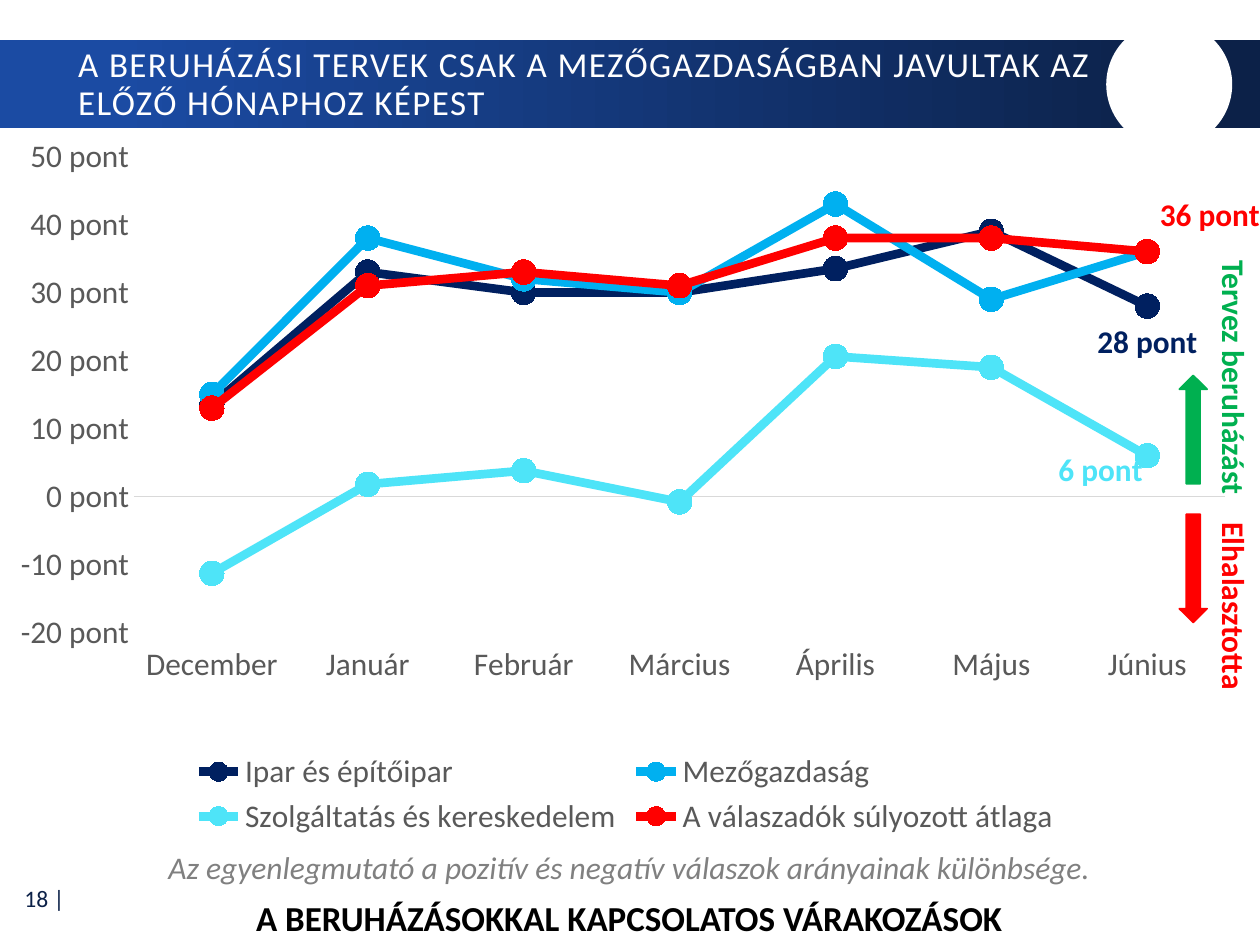
import pptx
import pptx.util
import pptx.chart.data
import pptx.oxml
from pptx.dml.color import RGBColor
from pptx.enum.chart import XL_CHART_TYPE, XL_LABEL_POSITION, XL_LEGEND_POSITION
from pptx.enum.chart import XL_MARKER_STYLE, XL_TICK_LABEL_POSITION, XL_TICK_MARK
from pptx.enum.shapes import MSO_SHAPE
from pptx.enum.text import MSO_ANCHOR, PP_ALIGN
from pptx.oxml.ns import qn

Inches, Pt = pptx.util.Inches, pptx.util.Pt

# Colours
WHITE = RGBColor(0xFF, 0xFF, 0xFF)
BLACK = RGBColor(0, 0, 0)
BLUE = RGBColor(0x1B, 0x4B, 0xA3)
DARK = RGBColor(0x0C, 0x21, 0x48)
NAVY = RGBColor(0x00, 0x20, 0x60)
SKY = RGBColor(0x00, 0xB0, 0xF0)
AQUA = RGBColor(0x4E, 0xE4, 0xF8)
RED = RGBColor(0xFF, 0, 0)
GREEN = RGBColor(0x00, 0xB0, 0x50)
GREY = RGBColor(0x80, 0x80, 0x80)
TEXT = RGBColor(0x59, 0x59, 0x59)
RULE = RGBColor(0xD9, 0xD9, 0xD9)

# Content
FONT = "Calibri"
TITLE = "A BERUHÁZÁSI TERVEK CSAK A MEZŐGAZDASÁGBAN JAVULTAK AZ ELŐZŐ HÓNAPHOZ KÉPEST"
PAGE = "18 |"
NOTE = "Az egyenlegmutató a pozitív és negatív válaszok arányainak különbsége."
TOPIC = "A BERUHÁZÁSOKKAL KAPCSOLATOS VÁRAKOZÁSOK"
SIDE = [("Tervez beruházást\t", GREEN), ("Elhalasztotta", RED)]
ARROWS = [(2.98, 0, GREEN), (4.08, 180, RED)]
UNIT = '0\\ "pont"'
MONTHS = ["December", "Január", "Február", "Március", "Április", "Május", "Június"]
BELOW, LEFT, ABOVE = (XL_LABEL_POSITION.BELOW, XL_LABEL_POSITION.LEFT,
                      XL_LABEL_POSITION.ABOVE)
# name, colour, values, last label: (side, shift x, shift y)
SERIES = [
    ("Ipar és építőipar", NAVY, [13.5, 33, 30, 30, 33.5, 39, 28], (BELOW, 0, 0)),
    ("Mezőgazdaság", SKY, [15, 38, 32, 30, 43, 29, 36], None),
    ("Szolgáltatás és kereskedelem", AQUA,
     [-11.3, 1.8, 3.8, -0.8, 20.6, 19, 6], (LEFT, 0.01, 0.02)),
    ("A válaszadók súlyozott átlaga", RED,
     [13, 31, 33, 31, 38, 38, 36], (ABOVE, 0.05, 0)),
]


def put(obj, **vals):
    for key, val in vals.items():
        setattr(obj, key, val)


def style(font, size, color, **vals):
    put(font, name=FONT, size=Pt(size), **vals)
    font.color.rgb = color


def write(para, text, size, color, **vals):
    run = para.add_run()
    run.text = text
    style(run.font, size, color, **vals)
    return run


def box(*at):
    frame = slide.shapes.add_textbox(*map(Inches, at)).text_frame
    frame.word_wrap = True
    return frame


def shape(kind, at, color, edge=False):
    item = slide.shapes.add_shape(kind, *map(Inches, at))
    item.shadow.inherit = False
    item.fill.solid()
    item.fill.fore_color.rgb = color
    if edge:
        item.line.color.rgb = color
        item.line.width = Pt(1)
    else:
        item.line.fill.background()
    return item


def layout(x, y, size=None):
    """Manual chart layout: an inner plot area, or a label shift."""
    tags = [("x", x), ("y", y)]
    if size:
        tags = ([("layoutTarget", "inner"), ("xMode", "edge"), ("yMode", "edge")]
                + tags + [("w", size[0]), ("h", size[1])])
    body = "".join(f'<c:{tag} val="{val}"/>' for tag, val in tags)
    return pptx.oxml.parse_xml(
        '<c:layout xmlns:c="http://schemas.openxmlformats.org/drawingml/2006/chart">'
        f"<c:manualLayout>{body}</c:manualLayout></c:layout>")


deck = pptx.Presentation()
put(deck, slide_width=Inches(10), slide_height=Inches(7.5))
slide = deck.slides.add_slide(deck.slide_layouts[5])

# Page number and header band
frame = box(0.01, 6.94, 0.6, 0.37)
frame.vertical_anchor = MSO_ANCHOR.MIDDLE
frame.paragraphs[0].alignment = PP_ALIGN.RIGHT
write(frame.paragraphs[0], PAGE, 13.5, DARK)

band = shape(MSO_SHAPE.RECTANGLE, (0, 0.32, 10, 0.7), BLUE)
band.fill.gradient()
band.fill.gradient_angle = 0
for stop, (pos, color) in zip(band.fill.gradient_stops, [(0.09, BLUE), (0.95, DARK)]):
    stop.position = pos
    stop.color.rgb = color
shape(MSO_SHAPE.OVAL, (8.78, 0.17, 1, 1), WHITE)

# Title, raised above the band
title = slide.shapes.title
put(title, left=Inches(0.52), top=Inches(0.34), width=Inches(8.32), height=Inches(0.67))
put(title.text_frame, word_wrap=True, vertical_anchor=MSO_ANCHOR.MIDDLE)
para = title.text_frame.paragraphs[0]
put(para, alignment=PP_ALIGN.LEFT, line_spacing=0.9)
run = write(para, TITLE, 20, WHITE)
run.font._element.set("spc", "80")
slide.shapes._spTree.append(title._element)

# Note and topic
frame = box(0.85, 6.68, 8.29, 0.82)
para = frame.paragraphs[0]
put(para, alignment=PP_ALIGN.CENTER, space_after=Pt(6))
write(para, NOTE, 18, GREY, italic=True)
para = frame.add_paragraph()
para.alignment = PP_ALIGN.CENTER
write(para, TOPIC, 20, BLACK, bold=True)

# Arrows and upright side text
for top, turn, color in ARROWS:
    arrow = shape(MSO_SHAPE.UP_ARROW, (9.36, top, 0.22, 0.86), color, True)
    arrow.rotation = turn

frame = box(9.5, 1.97, 0.5, 4.23)
frame._txBody.bodyPr.set("vert", "vert")
para = frame.paragraphs[0]
tabs = pptx.oxml.parse_xml(
    '<a:tabLst xmlns:a="http://schemas.openxmlformats.org/drawingml/2006/main">'
    f'<a:tab pos="{Inches(2.08)}" algn="l"/></a:tabLst>')
para._p.get_or_add_pPr().append(tabs)
for text, color in SIDE:
    write(para, text, 18, color, bold=True)

# Chart
data = pptx.chart.data.CategoryChartData(number_format=UNIT)
data.categories = MONTHS
for name, color, vals, label in SERIES:
    data.add_series(name, vals)
chart = slide.shapes.add_chart(XL_CHART_TYPE.LINE_MARKERS, Inches(0), Inches(0.98),
                               Inches(10), Inches(5.7), data).chart
put(chart, has_title=False, has_legend=True)
style(chart.font, 18, BLACK)
put(chart.legend, position=XL_LEGEND_POSITION.BOTTOM, include_in_layout=False)
style(chart.legend.font, 18, TEXT)

area = chart._chartSpace.chart.plotArea
for old in area.findall(qn("c:layout")):
    area.remove(old)
area.insert(0, layout(0.107, 0.046, (0.872, 0.663)))

# Axes
months, points = chart.category_axis, chart.value_axis
for axis in (months, points):
    put(axis, has_major_gridlines=False, major_tick_mark=XL_TICK_MARK.NONE,
        minor_tick_mark=XL_TICK_MARK.NONE)
    style(axis.tick_labels.font, 18, TEXT)
months.tick_label_position = XL_TICK_LABEL_POSITION.LOW
months.format.line.color.rgb = RULE
months.format.line.width = Pt(0.75)
put(points, minimum_scale=-20, maximum_scale=50, major_unit=10)
put(points.tick_labels, number_format=UNIT, number_format_is_linked=False)
points.format.line.fill.background()

# Lines, markers and last labels
for line, (name, color, vals, label) in zip(chart.plots[0].series, SERIES):
    line.smooth = False
    line.format.line.color.rgb = color
    line.format.line.width = Pt(5)
    put(line.marker, style=XL_MARKER_STYLE.CIRCLE, size=14)
    line.marker.format.fill.solid()
    line.marker.format.fill.fore_color.rgb = color
    line.marker.format.line.color.rgb = color
    if label:
        side, x, y = label
        line.data_labels.show_value = False
        last = line.points[len(vals) - 1].data_label
        style(last.font, 18, color, bold=True)
        last.position = side
        if x or y:
            last._dLbl.insert(1, layout(x, y))

deck.save("out.pptx")
